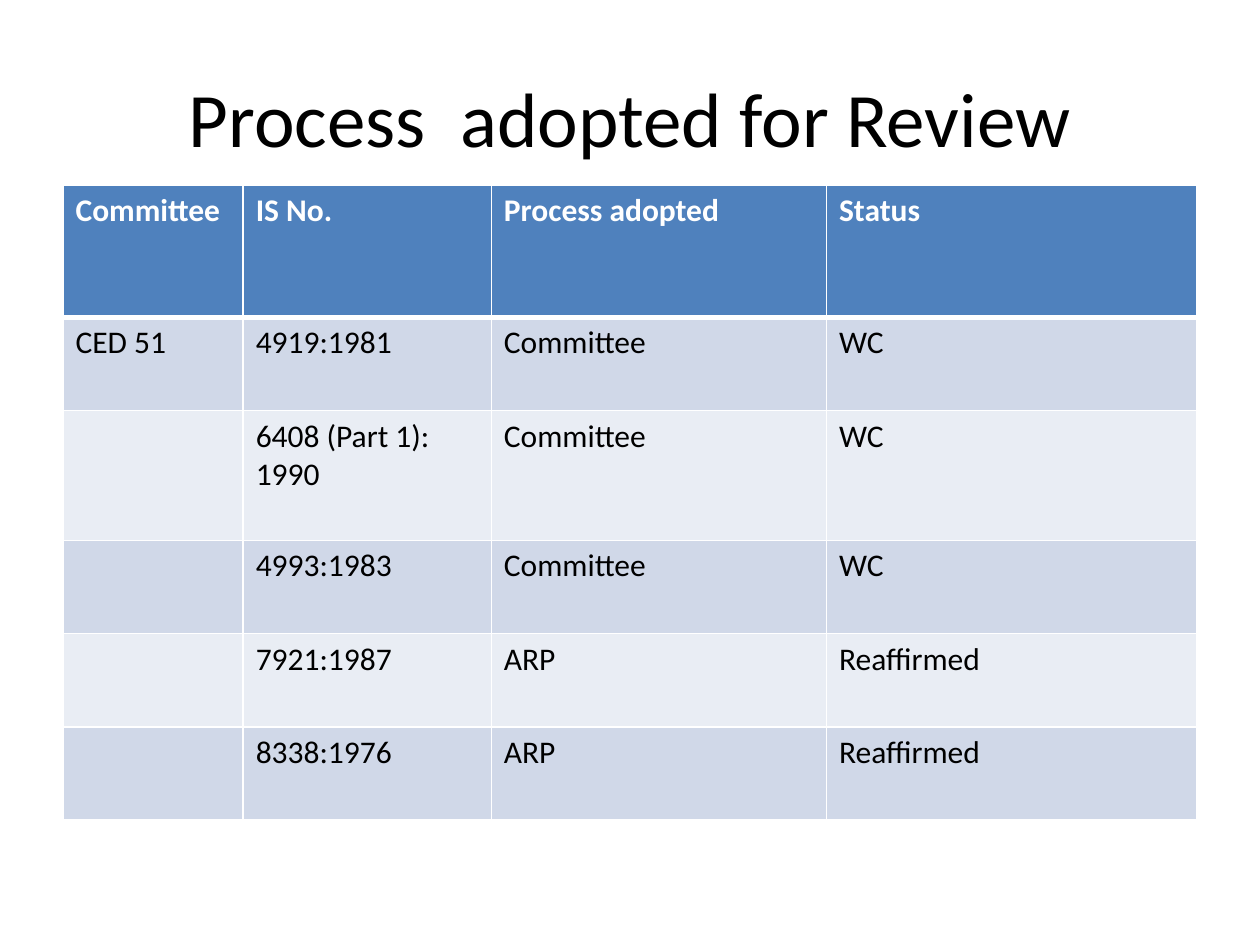
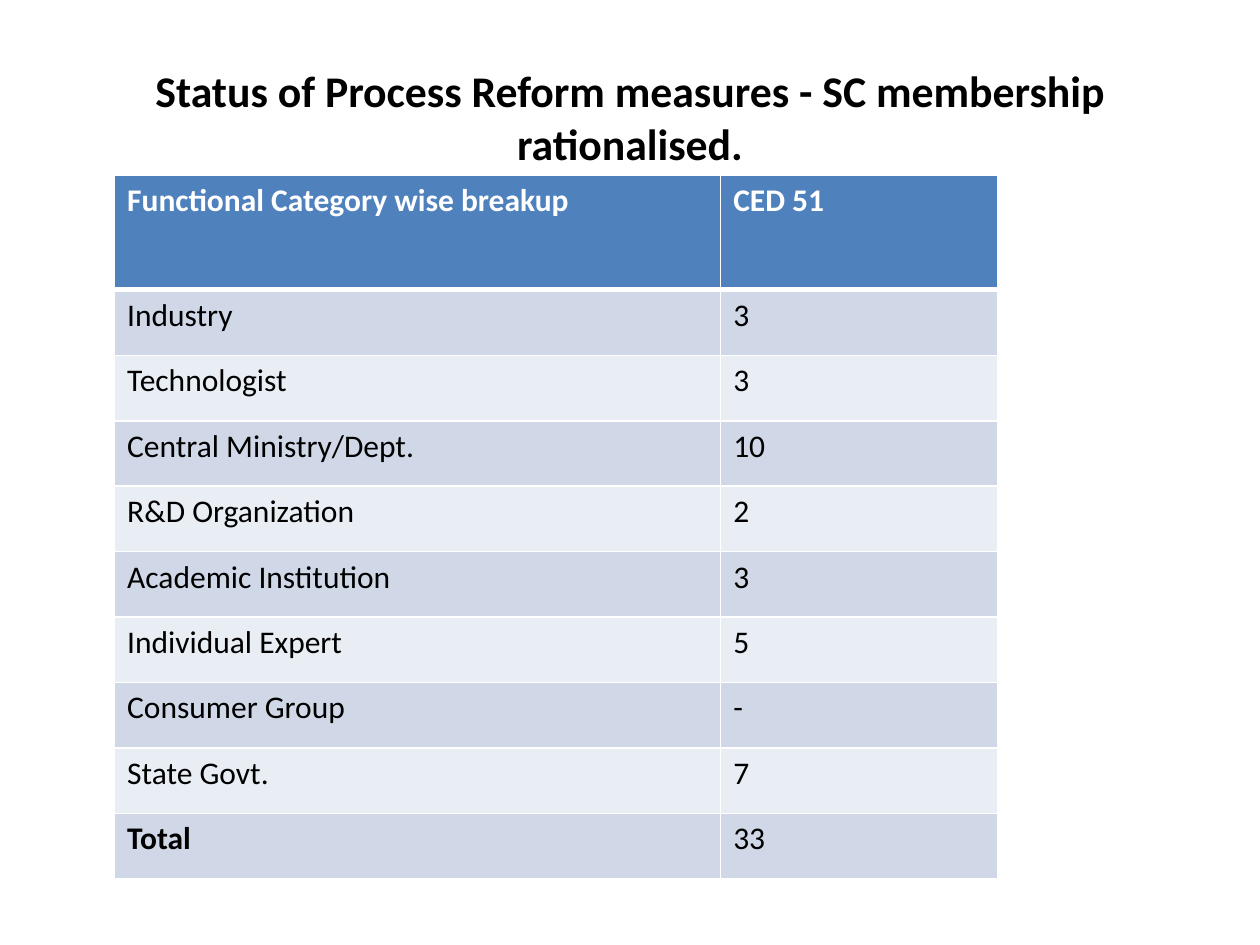
import pptx
import pptx.util
import pptx.dml.color
import pptx.enum.text
import pptx.oxml
import pptx.oxml.ns

Inches = pptx.util.Inches
Pt = pptx.util.Pt

# Shared style
FONT = "Calibri"
BLACK, WHITE, BLUE = "000000", "FFFFFF", "4F81BD"
BANDS = ("D0D8E8", "E9EDF4")


def color(code):
    return pptx.dml.color.RGBColor.from_string(code)


class Deck:
    def __init__(self):
        self.prs = pptx.Presentation()
        self.prs.slide_width = Inches(10)
        self.prs.slide_height = Inches(7.5)
        self.slide = None

    def page(self, title, size, bold=False):
        """Start a slide and fill its title."""
        self.slide = self.prs.slides.add_slide(self.prs.slide_layouts[5])
        self.slide.background.fill.solid()
        self.slide.background.fill.fore_color.rgb = color(WHITE)
        head = self.slide.shapes.title
        head.left, head.top = Inches(0.5), Inches(0.3)
        head.width, head.height = Inches(9), Inches(1.25)
        frame = head.text_frame
        frame.word_wrap = True
        frame.auto_size = pptx.enum.text.MSO_AUTO_SIZE.NONE
        frame.vertical_anchor = pptx.enum.text.MSO_ANCHOR.MIDDLE
        para = frame.paragraphs[0]
        para.alignment = pptx.enum.text.PP_ALIGN.CENTER
        self.run(para, title, size, BLACK, bold)

    def run(self, para, text, size, code, bold=False):
        run = para.add_run()
        run.text = text
        run.font.name = FONT
        run.font.size = Pt(size)
        run.font.bold = bold
        run.font.color.rgb = color(code)

    def edges(self, cell, top, bottom):
        """Draw white borders with the given top and bottom widths."""
        props = cell._tc.get_or_add_tcPr()
        sides = (("L", 1), ("R", 1), ("T", top), ("B", bottom))
        for spot, (side, width) in enumerate(sides):
            line = pptx.oxml.parse_xml(
                f'<a:ln{side} {pptx.oxml.ns.nsdecls("a")} w="{Pt(width)}">'
                f'<a:solidFill><a:srgbClr val="{WHITE}"/></a:solidFill>'
                f'</a:ln{side}>')
            props.insert(spot, line)

    def table(self, left, top, cols, highs, rows):
        """Add a banded table; a last row named Total has a bold label."""
        grid = self.slide.shapes.add_table(
            len(rows), len(cols), Inches(left), Inches(top),
            Inches(sum(cols)), Inches(sum(highs))).table
        for col, width in zip(grid.columns, cols):
            col.width = Inches(width)
        for y, (texts, high) in enumerate(zip(rows, highs)):
            grid.rows[y].height = Inches(high)
            for x, text in enumerate(texts):
                cell = grid.cell(y, x)
                cell.fill.solid()
                cell.fill.fore_color.rgb = color(
                    BANDS[(y - 1) % 2] if y else BLUE)
                self.edges(cell, 3 if y == 1 else 1, 1 if y else 3)
                if text:
                    self.run(cell.text_frame.paragraphs[0], text, 18,
                             BLACK if y else WHITE,
                             y == 0 or text == "Total")


def main():
    deck = Deck()

    # Review process
    deck.page("Process  adopted for Review", 44)
    deck.table(0.5, 1.47, (1.43, 1.97, 2.66, 2.94),
               (1.05, 0.74, 1.03, 0.74, 0.74, 0.74), (
        ("Committee", "IS No.", "Process adopted", "Status"),
        ("CED 51", "4919:1981", "Committee", "WC"),
        ("", "6408 (Part 1): 1990", "Committee", "WC"),
        ("", "4993:1983", "Committee", "WC"),
        ("", "7921:1987", "ARP", "Reaffirmed"),
        ("", "8338:1976", "ARP", "Reaffirmed"),
    ))

    # Membership by category
    deck.page("Status of Process Reform measures - SC membership "
              "rationalised.", 25, True)
    deck.table(0.91, 1.39, (4.81, 2.2), [0.91] + [0.52] * 9, (
        ("Functional Category wise breakup", "CED 51"),
        ("Industry", "3"),
        ("Technologist", "3"),
        ("Central Ministry/Dept.", "10"),
        ("R&D Organization", "2"),
        ("Academic Institution", "3"),
        ("Individual Expert", "5"),
        ("Consumer Group", "-"),
        ("State Govt.", "7"),
        ("Total", "33"),
    ))

    deck.prs.save("out.pptx")


if __name__ == "__main__":
    main()
